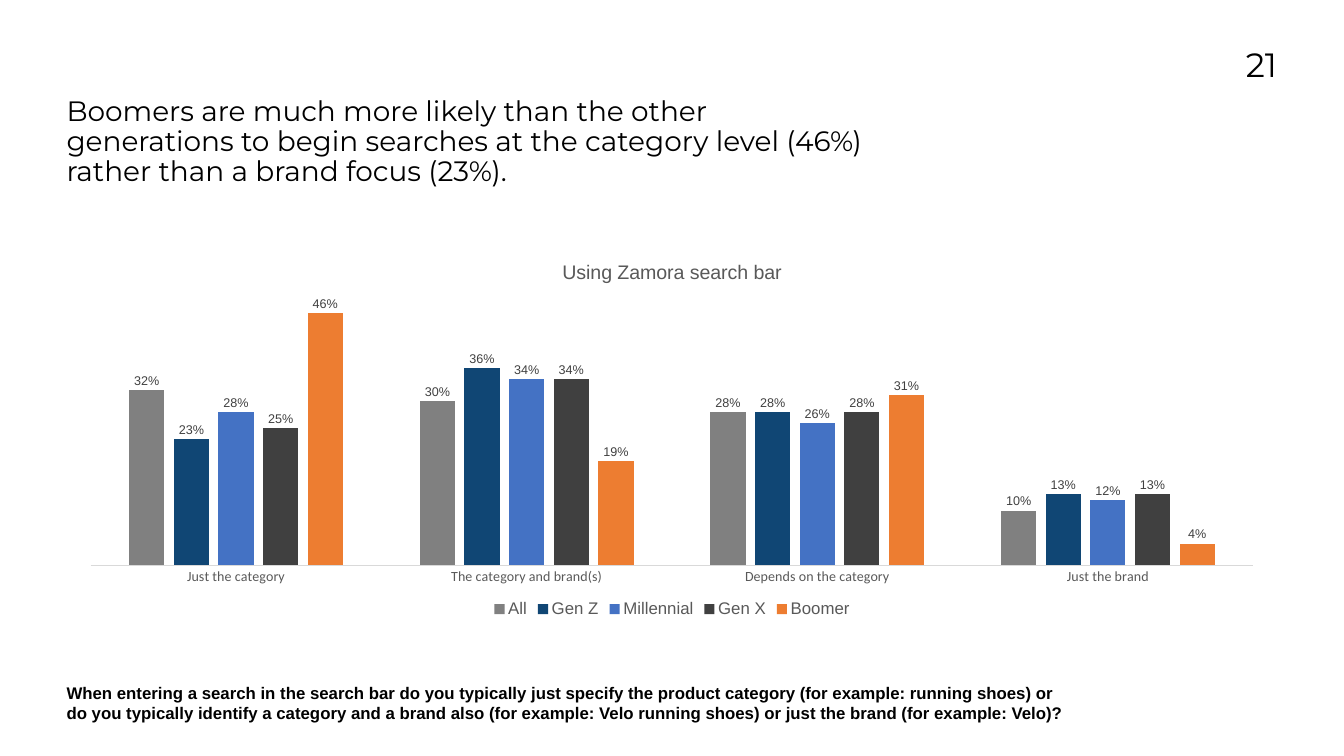
import pptx
import pptx.util
import pptx.oxml
import pptx.oxml.ns
import pptx.dml.color
import pptx.enum.text
import pptx.enum.chart
import pptx.chart.data

RGB = pptx.dml.color.RGBColor
BLACK = RGB(0x00, 0x00, 0x00)
WHITE = RGB(0xFF, 0xFF, 0xFF)
TEXT = RGB(0x59, 0x59, 0x59)
DARK = RGB(0x40, 0x40, 0x40)
RULE = RGB(0xD9, 0xD9, 0xD9)
GRAY = RGB(0x80, 0x80, 0x80)
NAVY = RGB(0x10, 0x46, 0x74)
BLUE = RGB(0x44, 0x72, 0xC4)
ORANGE = RGB(0xED, 0x7D, 0x31)

SCALE = 9144
LEFT = 132
HEAD = ("Boomers are much more likely than the other generations to begin "
        "searches at the category level (46%) rather than a brand focus (23%).")
ASK = ("When entering a search in the search bar do you typically just specify "
       "the product category (for example: running shoes) or do you typically "
       "identify a category and a brand also (for example: Velo running shoes) "
       "or just the brand (for example: Velo)?")
GROUPS = ["Just the category", "The category and brand(s)",
          "Depends on the category", "Just the brand"]
SERIES = [
    ("All", GRAY, (0.32, 0.30, 0.28, 0.10)),
    ("Gen Z", NAVY, (0.23, 0.36, 0.28, 0.13)),
    ("Millennial", BLUE, (0.28, 0.34, 0.26, 0.12)),
    ("Gen X", DARK, (0.25, 0.34, 0.28, 0.13)),
    ("Boomer", ORANGE, (0.46, 0.19, 0.31, 0.04)),
]


def px(n):
    return pptx.util.Emu(n * SCALE)


def style(font, size, color, name="Arial", bold=False):
    font.size = pptx.util.Pt(size)
    font.name = name
    font.bold = bold
    font.color.rgb = color


def place(shape, *box):
    shape.left, shape.top, shape.width, shape.height = map(px, box)


def write(shape, text, size, name, bold=False, align="LEFT", lead=1.0):
    frame = shape.text_frame
    frame.word_wrap = True
    frame.auto_size = pptx.enum.text.MSO_AUTO_SIZE.NONE
    frame.vertical_anchor = pptx.enum.text.MSO_ANCHOR.TOP
    frame.margin_left = frame.margin_right = 0
    frame.margin_top = frame.margin_bottom = 0
    para = frame.paragraphs[0]
    props = para._p.get_or_add_pPr()
    props.set("marL", "0")
    props.set("indent", "0")
    props.append(pptx.oxml.parse_xml(
        f"<a:buNone {pptx.oxml.ns.nsdecls('a')}/>"))
    para.alignment = getattr(pptx.enum.text.PP_ALIGN, align)
    para.line_spacing = lead
    para.space_before = pptx.util.Pt(0)
    run = para.add_run()
    run.text = text
    style(run.font, size, BLACK, name, bold)


def fit(chart, **parts):
    area = chart._chartSpace.chart.plotArea
    for old in area.findall(pptx.oxml.ns.qn("c:layout")):
        area.remove(old)
    sizes = "".join(f'<c:{k} val="{v}"/>' for k, v in parts.items())
    area.insert(0, pptx.oxml.parse_xml(
        f"<c:layout {pptx.oxml.ns.nsdecls('c')}><c:manualLayout>"
        '<c:layoutTarget val="inner"/><c:xMode val="edge"/>'
        f'<c:yMode val="edge"/>{sizes}</c:manualLayout></c:layout>'))


def draw_axes(chart):
    none = pptx.enum.chart.XL_TICK_MARK.NONE
    cat = chart.category_axis
    cat.major_tick_mark = none
    cat.has_major_gridlines = False
    cat.format.line.color.rgb = RULE
    cat.format.line.width = pptx.util.Pt(0.75)
    style(cat.tick_labels.font, 20, TEXT, "Calibri")
    val = chart.value_axis
    val.visible = False
    val.has_major_gridlines = False
    val.minimum_scale = 0
    val.maximum_scale = 0.5


def draw_bars(chart):
    plot = chart.plots[0]
    plot.gap_width = 219
    plot.overlap = -27
    plot.vary_by_categories = False
    for bar, (_, color, _) in zip(plot.series, SERIES):
        bar.format.fill.solid()
        bar.format.fill.fore_color.rgb = color
        tags = bar.data_labels
        tags.show_value = True
        tags.number_format = "0%"
        tags.number_format_is_linked = False
        tags.position = pptx.enum.chart.XL_LABEL_POSITION.OUTSIDE_END
        style(tags.font, 18, DARK)


def add_bars(slide, *box):
    data = pptx.chart.data.CategoryChartData(number_format="0%")
    data.categories = GROUPS
    for name, _, vals in SERIES:
        data.add_series(name, vals)
    kind = pptx.enum.chart.XL_CHART_TYPE.COLUMN_CLUSTERED
    chart = slide.shapes.add_chart(kind, *map(px, box), data).chart
    style(chart.font, 10, BLACK, "Calibri")
    chart.has_title = True
    run = chart.chart_title.text_frame.paragraphs[0].add_run()
    run.text = "Using Zamora search bar"
    style(run.font, 28, TEXT)
    chart.chart_title.include_in_layout = False
    chart.has_legend = True
    chart.legend.position = pptx.enum.chart.XL_LEGEND_POSITION.BOTTOM
    chart.legend.include_in_layout = False
    style(chart.legend.font, 24, TEXT)
    draw_axes(chart)
    draw_bars(chart)
    fit(chart, x=0.02, y=0.12, w=0.96, h=0.73)


def main():
    deck = pptx.Presentation()
    deck.slide_width = px(2667)
    deck.slide_height = px(1500)
    slide = deck.slides.add_slide(deck.slide_layouts[1])
    slide.background.fill.solid()
    slide.background.fill.fore_color.rgb = WHITE
    page = slide.shapes.add_textbox(*map(px, (2309, 88, 225, 164)))
    write(page, "21", 48, "Montserrat", align="RIGHT")
    add_bars(slide, LEFT, 488, 2403, 746)
    title, body = slide.placeholders
    place(title, LEFT, 193, 1601, 208)
    write(title, HEAD, 40, "Montserrat", lead=0.9)
    place(body, LEFT, 1355, 1997, 65)
    write(body, ASK, 24, "Arial", bold=True)
    deck.save("out.pptx")


if __name__ == "__main__":
    main()
